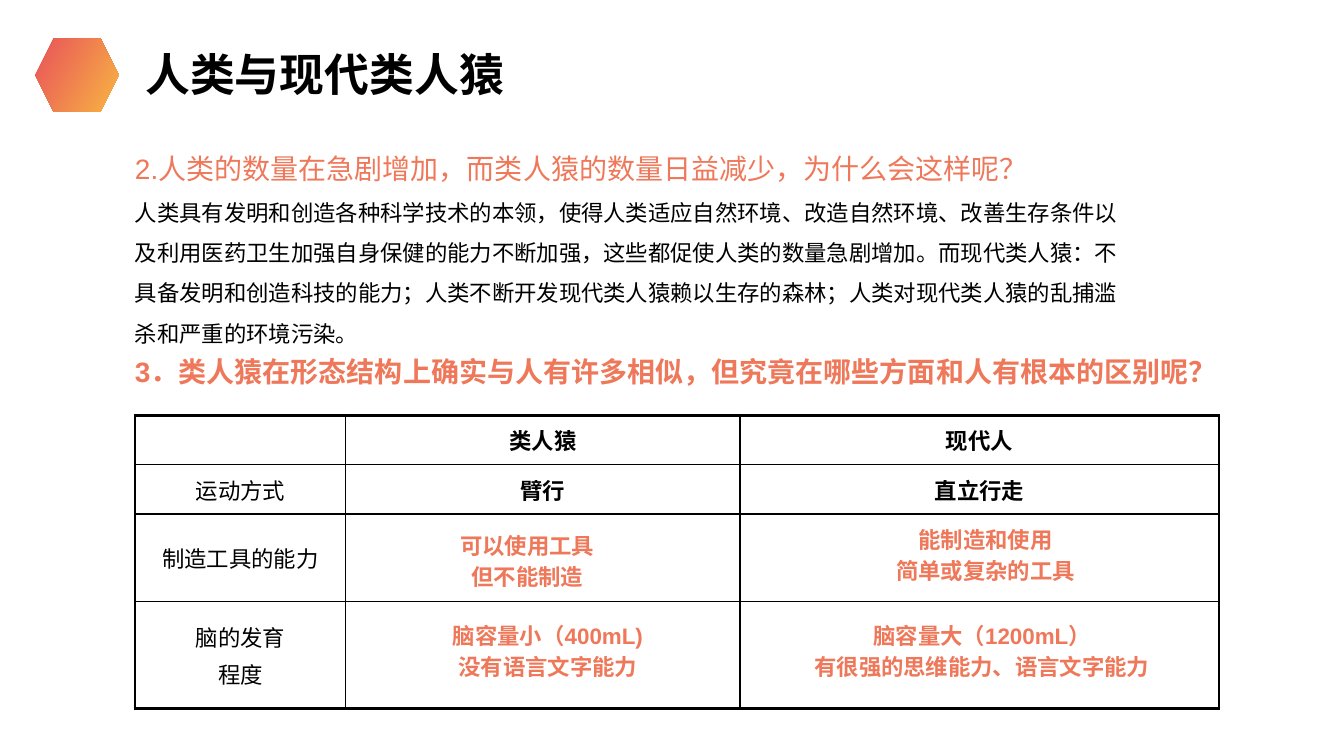
from lxml.etree import SubElement
from pptx import Presentation
from pptx.dml.color import RGBColor
from pptx.enum.shapes import MSO_SHAPE as Preset
from pptx.enum.text import MSO_ANCHOR as Anchor, MSO_AUTO_SIZE as AutoSize, PP_ALIGN as Align
from pptx.oxml.ns import qn
from pptx.util import Emu, Pt

PX = 9144
BLACK, CORAL = "000000", "EE7859"
THICK, THIN = 2.25, 1


def px(*lengths):
    return [Emu(length * PX) for length in lengths]


def colour(code):
    return RGBColor.from_string(code)


def write(frame, lines, size=16, ink=BLACK, bold=False, align=Align.LEFT, before=0, spacing=None):
    for index, line in enumerate(lines):
        para = frame.paragraphs[0] if index == 0 else frame.add_paragraph()
        para.alignment = align
        para.space_before = Pt(before)
        para.line_spacing = spacing
        span = para.add_run()
        span.text = line
        span.font.name = "Arial"
        span.font.size = Pt(size)
        span.font.bold = bold
        span.font.color.rgb = colour(ink)


class SlideBuilder:
    centred = dict(align=Align.CENTER, before=3.2)

    def __init__(self, deck):
        self.page = deck.slides.add_slide(deck.slide_layouts[5])
        self.shapes = self.page.shapes

    def title(self, text, left, top, width, height):
        box = self.shapes.title
        box.left, box.top, box.width, box.height = px(left, top, width, height)
        frame = box.text_frame
        frame.word_wrap = False
        frame.auto_size = AutoSize.SHAPE_TO_FIT_TEXT
        frame.vertical_anchor = Anchor.TOP
        write(frame, [text], size=32, bold=True)

    def text(self, lines, left, top, width, height, **style):
        frame = self.shapes.add_textbox(*px(left, top, width, height)).text_frame
        frame.word_wrap = True
        frame.auto_size = AutoSize.SHAPE_TO_FIT_TEXT
        write(frame, lines, **style)
        return frame

    def hexagon(self, left, top, width, height, stops, angle):
        badge = self.shapes.add_shape(Preset.HEXAGON, *px(left, top, width, height))
        badge.shadow.inherit = False
        badge.line.fill.background()
        badge.fill.gradient()
        badge.fill.gradient_angle = angle
        for position, (stop, code) in enumerate(zip(badge.fill.gradient_stops, stops)):
            stop.position = position
            stop.color.rgb = colour(code)

    def border(self, cell, side, width):
        edge = SubElement(cell._tc.get_or_add_tcPr(), qn(f"a:ln{side}"), w=str(Pt(width)))
        fill = SubElement(edge, qn("a:solidFill"))
        SubElement(fill, qn("a:srgbClr"), val=BLACK)

    def table(self, rows, left, top, widths, heights):
        area = px(left, top, sum(widths), sum(heights))
        table = self.shapes.add_table(len(heights), len(widths), *area).table
        table.first_row = table.horz_banding = False
        for column, width in zip(table.columns, px(*widths)):
            column.width = width
        for row, height in zip(table.rows, px(*heights)):
            row.height = height
        last_row, last_column = len(heights) - 1, len(widths) - 1
        for r, row in enumerate(rows):
            for c, lines in enumerate(row):
                cell = table.cell(r, c)
                cell.vertical_anchor = Anchor.MIDDLE
                outer = {"L": c == 0, "R": c == last_column, "T": r == 0, "B": r == last_row}
                for side, is_outer in outer.items():
                    self.border(cell, side, THICK if is_outer else THIN)
                cell.fill.background()
                write(cell.text_frame, lines, bold=c > 0, **self.centred)


def main():
    deck = Presentation()
    deck.slide_width, deck.slide_height = px(1333, 750)
    slide = SlideBuilder(deck)

    slide.hexagon(35, 38, 83, 73, ["E8525B", "F8B542"], 330)
    slide.title("人类与现代类人猿", 134, 41, 389, 64)

    reasons = slide.text(
        ["2.人类的数量在急剧增加，而类人猿的数量日益减少，为什么会这样呢？"],
        124, 129, 1000, 218, size=20, ink=CORAL, spacing=1.5)
    answer = (
        "人类具有发明和创造各种科学技术的本领，使得人类适应自然环境、改造自然环境、"
        "改善生存条件以及利用医药卫生加强自身保健的能力不断加强，这些都促使人类的数量急剧增加。"
        "而现代类人猿：不具备发明和创造科技的能力；人类不断开发现代类人猿赖以生存的森林；"
        "人类对现代类人猿的乱捕滥杀和严重的环境污染。")
    para = reasons.add_paragraph()
    para.line_spacing = 1.5
    span = para.add_run()
    span.text = answer
    span.font.name = "Arial"
    span.font.size = Pt(16)
    span.font.color.rgb = colour(BLACK)

    slide.text(
        ["3．类人猿在形态结构上确实与人有许多相似，但究竟在哪些方面和人有根本的区别呢？"],
        124, 347, 1149, 44, size=20, ink=CORAL, bold=True)

    slide.table([
        [[], ["类人猿"], ["现代人"]],
        [["运动方式"], ["臂行"], ["直立行走"]],
        [["制造工具的能力"], [], []],
        [["脑的发育", "程度"], [], []],
    ], 134, 412, [209, 391, 475], [49, 49, 87, 106])

    answers = [
        (["可以使用工具", "但不能制造"], 393, 523, 260),
        (["能制造和使用", "简单或复杂的工具"], 832, 517, 291),
        (["脑容量小（400mL)", "没有语言文字能力"], 390, 612, 307),
        (["脑容量大（1200mL）", "有很强的思维能力、语言文字能力"], 777, 612, 394),
    ]
    for lines, left, top, width in answers:
        slide.text(lines, left, top, width, 69, ink=CORAL, bold=True, **slide.centred)

    deck.save("out.pptx")


if __name__ == "__main__":
    main()
